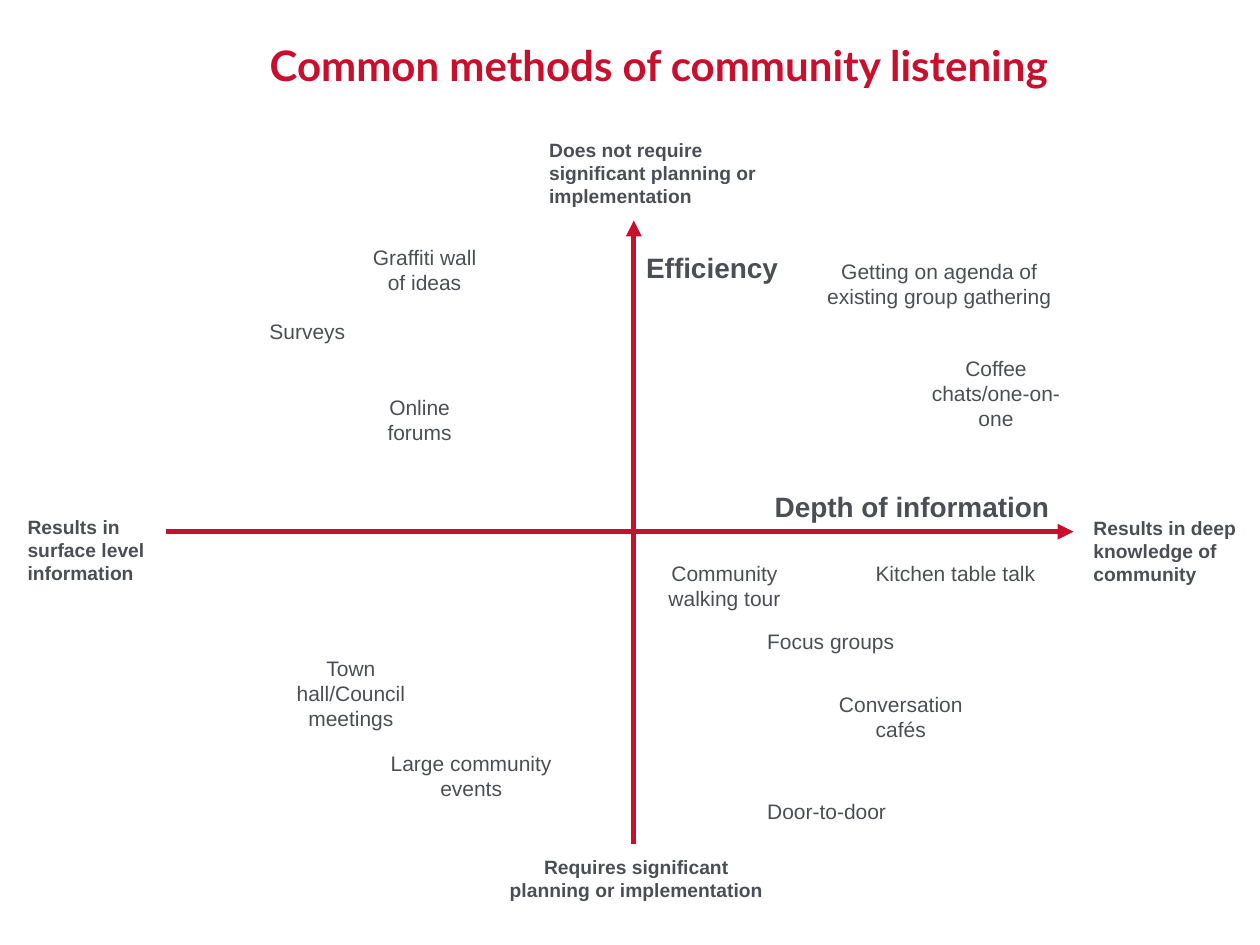
from lxml import etree
from pptx import Presentation
from pptx.dml.color import RGBColor
from pptx.enum.shapes import MSO_CONNECTOR
from pptx.enum.text import MSO_ANCHOR, MSO_AUTO_SIZE, PP_ALIGN
from pptx.oxml.ns import qn
from pptx.util import Inches, Pt

STRAIGHT = MSO_CONNECTOR.STRAIGHT
TOP = MSO_ANCHOR.TOP
GROW = MSO_AUTO_SIZE.SHAPE_TO_FIT_TEXT
LEFT, CENTER = PP_ALIGN.LEFT, PP_ALIGN.CENTER

COLORS = {"red": "C8102E", "gray": "4B4F55"}
STYLES = {
    "title": {"name": "Lato", "size": Pt(24), "bold": True},
    "axis": {"name": "Arial", "size": Pt(16), "bold": True},
    "end": {"name": "Arial", "size": Pt(11), "bold": True},
    "method": {"name": "Arial", "size": Pt(12), "bold": False},
}


def write(sp, text, style, color, align, wrap):
    tf = sp.text_frame
    tf.word_wrap = wrap
    tf.auto_size = GROW
    tf.vertical_anchor = TOP
    p = tf.paragraphs[0]
    p.alignment = align
    r = p.add_run()
    r.text = text
    for key, value in STYLES[style].items():
        setattr(r.font, key, value)
    r.font.color.rgb = RGBColor.from_string(COLORS[color])


prs = Presentation()
prs.slide_width, prs.slide_height = Inches(10), Inches(7.5)
s = prs.slides.add_slide(prs.slide_layouts[5])

title = s.shapes.title
title.left, title.top = Inches(2.04), Inches(0.26)
title.width, title.height = Inches(6.91), Inches(0.5)
write(title, "Common methods of community listening", "title", "red", LEFT, False)

axes = [(1.32, 4.22, 8.52, 4.22), (5.03, 6.7, 5.03, 1.75)]
for ends in axes:
    axis = s.shapes.add_connector(STRAIGHT, *[Inches(v) for v in ends])
    axis.line.width = Pt(3)
    axis.line.color.rgb = RGBColor.from_string(COLORS["red"])
    etree.SubElement(axis.line._get_or_add_ln(), qn("a:tailEnd"), type="triangle")
    etree.SubElement(axis._element.spPr, qn("a:effectLst"))

labels = [
    ("Depth of information", "axis", LEFT, False, 6.05, 3.84, 2.41, 0.37),
    ("Efficiency", "axis", LEFT, False, 5.03, 1.94, 1.26, 0.37),
    ("Does not require significant\u00a0planning or implementation".replace("\u00a0", " "),
     "end", LEFT, True, 4.26, 1.05, 1.85, 0.66),
    ("Requires significant planning or implementation", "end", CENTER, True, 3.89, 6.74, 2.32, 0.47),
    ("Results in deep knowledge of community", "end", LEFT, True, 8.58, 4.05, 1.69, 0.66),
    ("Results in surface level information", "end", LEFT, True, 0.12, 4.04, 1.28, 0.66),
    ("Graffiti wall of ideas", "method", CENTER, True, 2.81, 1.89, 1.12, 0.5),
    ("Surveys", "method", LEFT, False, 2.04, 2.48, 0.81, 0.3),
    ("Online forums", "method", CENTER, True, 2.77, 3.08, 1.12, 0.5),
    ("Getting on agenda of existing group gathering", "method", CENTER, True, 6.44, 2, 2.03, 0.5),
    ("Coffee chats/one-on-one", "method", CENTER, True, 7.22, 2.77, 1.37, 0.71),
    ("Town hall/Council meetings", "method", CENTER, True, 2.04, 5.15, 1.49, 0.5),
    ("Large community events", "method", CENTER, True, 2.99, 5.91, 1.5, 0.5),
    ("Community walking tour", "method", CENTER, True, 5.19, 4.4, 1.12, 0.5),
    ("Kitchen table talk", "method", LEFT, False, 6.85, 4.4, 1.48, 0.3),
    ("Focus groups", "method", LEFT, False, 5.99, 4.94, 1.22, 0.3),
    ("Conversation cafés", "method", CENTER, True, 6.52, 5.44, 1.26, 0.5),
    ("Door-to-door", "method", LEFT, False, 5.99, 6.29, 1.15, 0.3),
]
for text, style, align, wrap, *box in labels:
    sp = s.shapes.add_textbox(*[Inches(v) for v in box])
    write(sp, text, style, "gray", align, wrap)

prs.save("out.pptx")
